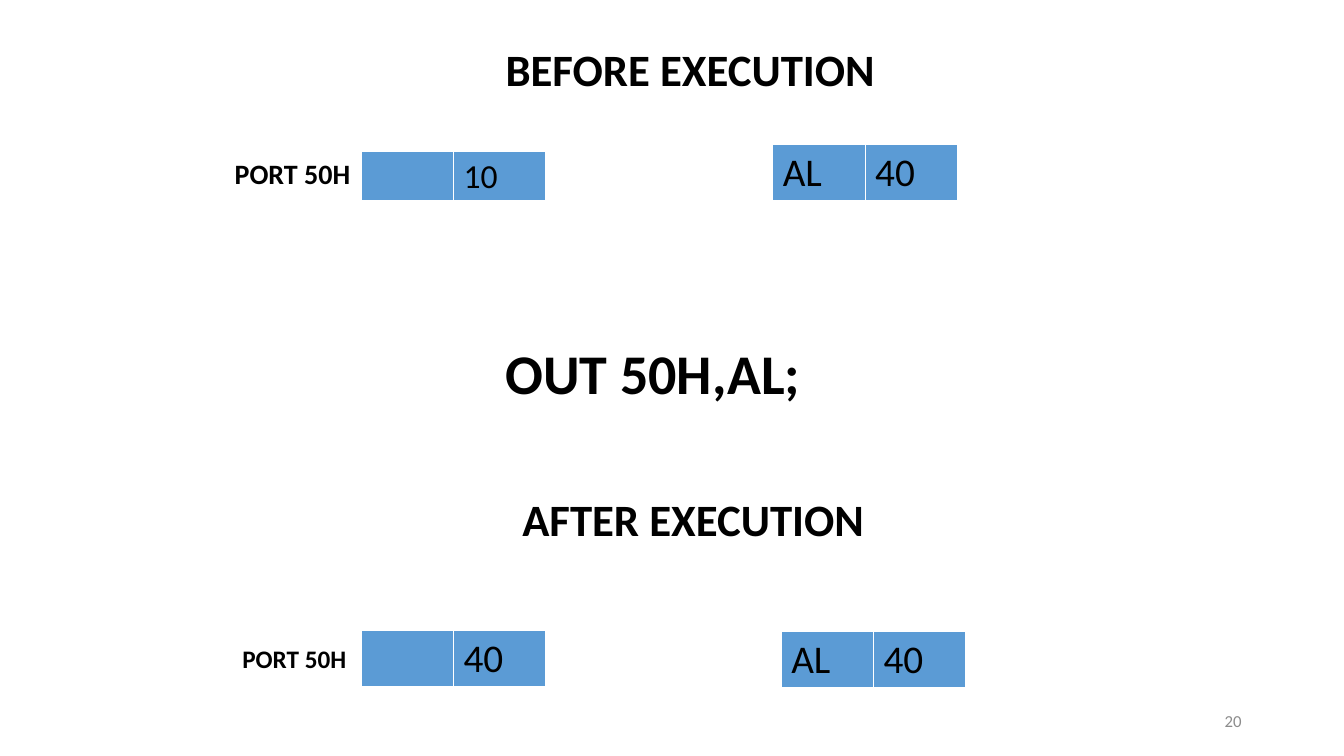
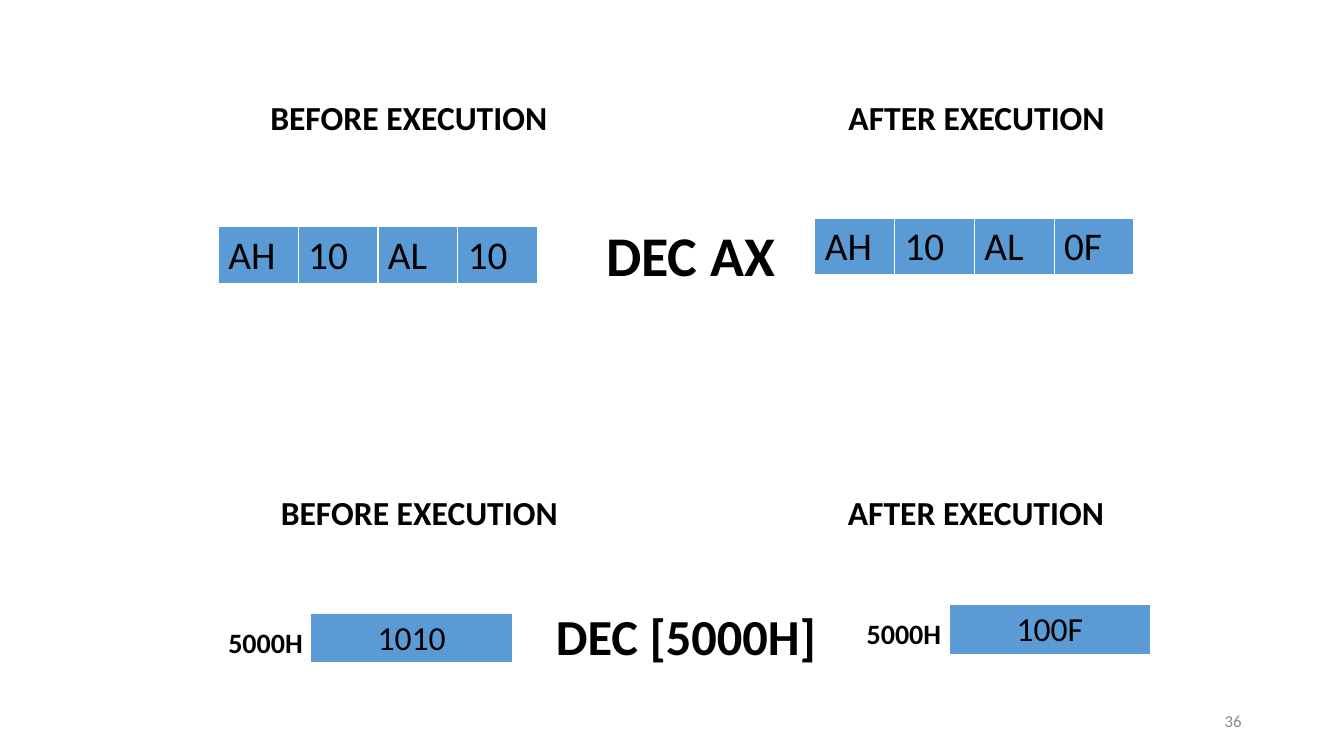
from pptx import Presentation
from pptx.dml.color import RGBColor
from pptx.enum.text import MSO_ANCHOR, PP_ALIGN
from pptx.oxml import parse_xml
from pptx.oxml.ns import nsdecls
from pptx.util import Pt

COLORS = {"text": "000000", "cell": "5B9BD5", "border": "FFFFFF", "number": "8C8C8C"}
FONT = "Calibri"
BORDERS = {"lnL": 1, "lnR": 1, "lnT": 1, "lnB": 3}
LINE_SPACING = 1.22
CELL_PADDING = 7.2


def style_paragraph(paragraph, size, bold=False, color="text", align=PP_ALIGN.LEFT):
    paragraph.alignment = align
    font = paragraph.font
    font.name = FONT
    font.size = Pt(size)
    font.bold = bold
    font.color.rgb = RGBColor.from_string(COLORS[color])


def add_text(page, text, left, top, width, height, size, bold=True,
             color="text", align=PP_ALIGN.LEFT, anchor=MSO_ANCHOR.TOP):
    box = page.shapes.add_textbox(Pt(left), Pt(top), Pt(width), Pt(height))
    frame = box.text_frame
    frame.word_wrap = True
    frame.vertical_anchor = anchor
    paragraph = frame.paragraphs[0]
    paragraph.text = text
    style_paragraph(paragraph, size, bold, color, align)


def add_page_number(page, number):
    add_text(page, number, 678, 500.5, 216, 28.75, 12, bold=False, color="number",
             align=PP_ALIGN.RIGHT, anchor=MSO_ANCHOR.MIDDLE)


def style_cell(cell):
    properties = cell._tc.get_or_add_tcPr()
    for tag, width in BORDERS.items():
        properties.append(parse_xml(
            f'<a:{tag} {nsdecls("a")} w="{Pt(width)}"><a:solidFill>'
            f'<a:srgbClr val="{COLORS["border"]}"/></a:solidFill></a:{tag}>'))
    cell.fill.solid()
    cell.fill.fore_color.rgb = RGBColor.from_string(COLORS["cell"])


def add_register(page, values, left, top, column_width, size=28, align=PP_ALIGN.LEFT):
    height = size * LINE_SPACING + CELL_PADDING
    table = page.shapes.add_table(1, len(values), Pt(left), Pt(top),
                                  Pt(column_width * len(values)), Pt(height)).table
    table.first_row = False
    table.horz_banding = False
    for column, value in enumerate(values):
        table.columns[column].width = Pt(column_width)
        cell = table.cell(0, column)
        cell.text = value
        style_cell(cell)
        style_paragraph(cell.text_frame.paragraphs[0], size, align=align)


def build_out_page(page):
    add_register(page, ["", "10"], 258, 108, 66, size=24)
    add_register(page, ["AL", "40"], 552, 103, 66)
    add_register(page, ["", "40"], 258, 450, 66)
    add_register(page, ["AL", "40"], 558, 450.75, 66)
    add_text(page, "BEFORE EXECUTION", 354, 26, 456, 46, 32)
    add_text(page, "AFTER EXECUTION", 366, 348, 456, 46, 32)
    add_text(page, "OUT 50H,AL;", 354, 238, 240, 56, 40)
    add_text(page, "PORT 50H", 160.5, 108, 98, 32, 20)
    add_text(page, "PORT 50H", 166, 456, 98, 29, 18)
    add_page_number(page, "20")


def build_dec_page(page):
    for left, top in [(186, 65.5), (193.5, 348)]:
        add_text(page, "BEFORE EXECUTION", left, top, 216, 36, 24)
    for left, top in [(599, 66), (598.5, 348)]:
        add_text(page, "AFTER EXECUTION", left, top, 200, 36, 24)
    add_text(page, "DEC AX", 426, 154, 138, 56, 40)
    add_text(page, "DEC [5000H]", 390, 428.5, 222, 51, 36)
    for left, top in [(156, 443), (612, 436.5)]:
        add_text(page, "5000H", left, top, 84, 32, 20)
    add_register(page, ["AH", "10", "AL", "10"], 156, 162, 57)
    add_register(page, ["AH", "10", "AL", "0F"], 582, 156, 57)
    add_register(page, ["1010"], 222, 438, 144, size=24, align=PP_ALIGN.CENTER)
    add_register(page, ["100F"], 678, 432, 144, size=24, align=PP_ALIGN.CENTER)
    add_page_number(page, "36")


def main():
    deck = Presentation()
    deck.slide_width = Pt(960)
    deck.slide_height = Pt(540)
    for build_page in (build_out_page, build_dec_page):
        build_page(deck.slides.add_slide(deck.slide_layouts[6]))
    deck.save("out.pptx")


if __name__ == "__main__":
    main()
